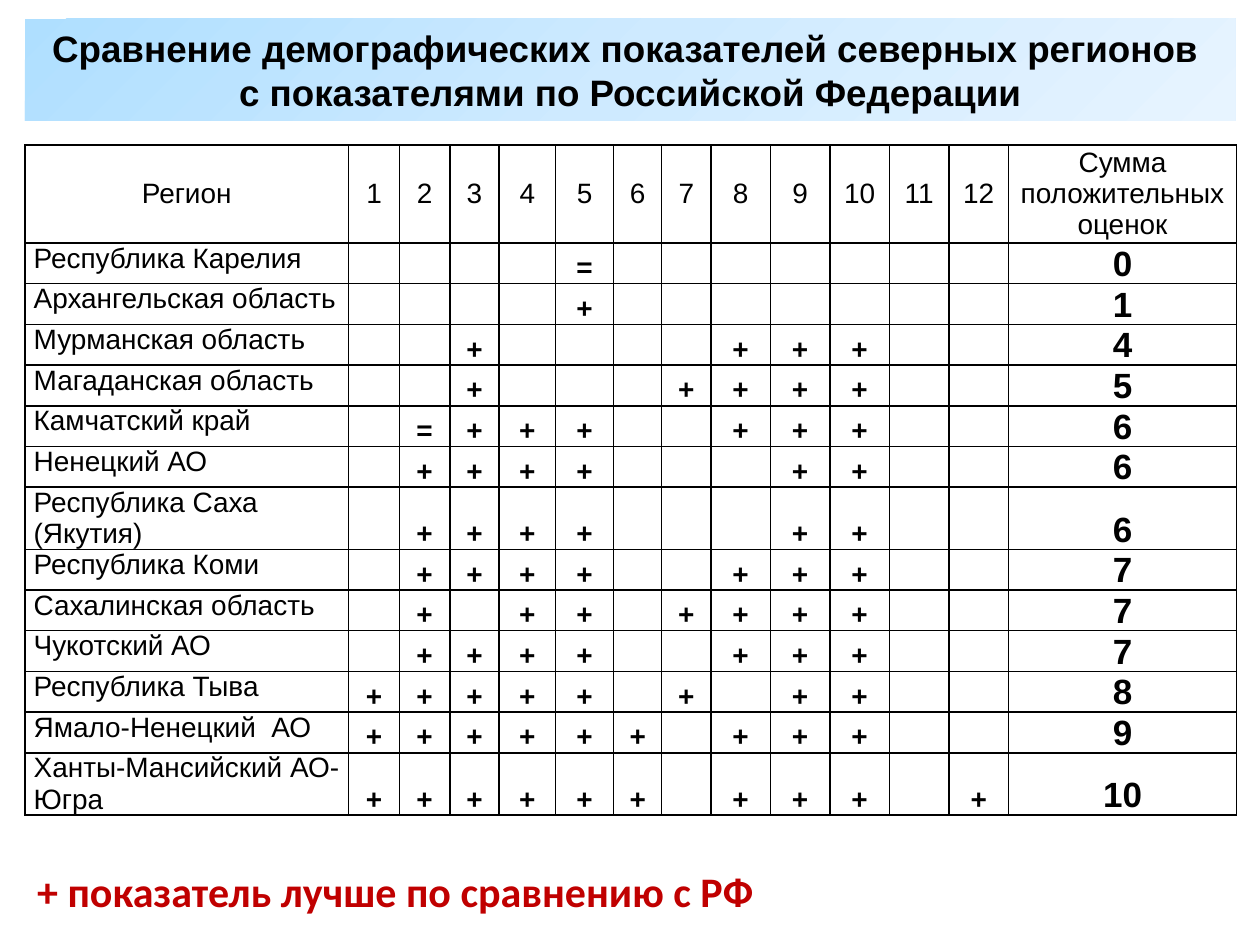
import copy

import lxml.etree
import pptx
import pptx.dml.color
import pptx.enum.shapes
import pptx.enum.text
import pptx.oxml.ns
import pptx.util

Cm = pptx.util.Cm
ALIGN = pptx.enum.text.PP_ALIGN
ANCHOR = pptx.enum.text.MSO_ANCHOR
qn = pptx.oxml.ns.qn

COLOURS = {
    "text": "000000",
    "border": "000000",
    "legend": "C00000",
    "banner_start": "AFDFFF",
    "banner_middle": "CEEAFF",
    "banner_end": "E7F4FF",
}

# Region, marks for indicators 1-12 ("." means no mark), total of positive marks
RATINGS = [
    ("Республика Карелия", "....=.......", 0),
    ("Архангельская область", "....+.......", 1),
    ("Мурманская область", "..+....+++..", 4),
    ("Магаданская область", "..+...++++..", 5),
    ("Камчатский край", ".=+++..+++..", 6),
    ("Ненецкий АО", ".++++...++..", 6),
    ("Республика Саха (Якутия)", ".++++...++..", 6),
    ("Республика Коми", ".++++..+++..", 7),
    ("Сахалинская область", ".+.++.++++..", 7),
    ("Чукотский АО", ".++++..+++..", 7),
    ("Республика Тыва", "+++++.+.++..", 8),
    ("Ямало-Ненецкий  АО", "++++++.+++..", 9),
    ("Ханты-Мансийский АО-Югра", "++++++.+++.+", 10),
]
COLUMN_WIDTHS = [6.53, 1.02, 1.02, 0.99, 1.14, 1.17, 0.97, 0.99] + [1.2] * 5 + [4.6]
HEADER_HEIGHT, ROW_HEIGHT = 1.98, 0.82
LEFT, WIDTH = 0.5, 24.41


def rgb(name):
    return pptx.dml.color.RGBColor.from_string(COLOURS[name])


def write(frame, text, size=16, font="Arial", colour="text", bold=False,
          align=ALIGN.LEFT):
    """Write each line of the text as a paragraph."""
    for index, line in enumerate(text.split("\n")):
        paragraph = frame.paragraphs[0] if index == 0 else frame.add_paragraph()
        paragraph.alignment = align
        run = paragraph.add_run()
        run.text = line
        run.font.size = pptx.util.Pt(size)
        run.font.name = font
        run.font.bold = bold
        run.font.color.rgb = rgb(colour)


class SlideBuilder:
    def __init__(self, slide):
        self.slide = slide
        self.border_width = pptx.util.Pt(1)
        self.cell_inset = Cm(0.18)

    def banner(self, left, top, width, height, text):
        banner = self.slide.shapes.add_shape(
            pptx.enum.shapes.MSO_SHAPE.RECTANGLE,
            Cm(left), Cm(top), Cm(width), Cm(height))
        banner.shadow.inherit = False
        banner.line.fill.background()
        banner.fill.gradient()
        banner.fill.gradient_angle = 315
        # The default gradient has two stops; a third one is added
        first_stop = next(banner.element.spPr.iter(qn("a:gs")))
        first_stop.addnext(copy.deepcopy(first_stop))
        shades = [(0, "banner_start"), (0.5, "banner_middle"), (1, "banner_end")]
        for stop, (position, shade) in zip(banner.fill.gradient_stops, shades):
            stop.position = position
            stop.color.rgb = rgb(shade)
        banner.text_frame.word_wrap = True
        banner.text_frame.vertical_anchor = ANCHOR.MIDDLE
        write(banner.text_frame, text, size=21, bold=True, align=ALIGN.CENTER)

    def cell_borders(self, cell):
        properties = cell._tc.get_or_add_tcPr()
        for index, side in enumerate(("lnL", "lnR", "lnT", "lnB")):
            line = lxml.etree.Element(qn(f"a:{side}"), w=str(self.border_width))
            fill = lxml.etree.SubElement(line, qn("a:solidFill"))
            lxml.etree.SubElement(fill, qn("a:srgbClr"), val=COLOURS["border"])
            properties.insert(index, line)

    def cell(self, cell, text, anchor, **text_format):
        cell.fill.background()
        self.cell_borders(cell)
        cell.margin_left = cell.margin_right = self.cell_inset
        cell.margin_top = cell.margin_bottom = 0
        cell.vertical_anchor = anchor
        if text:
            write(cell.text_frame, text, **text_format)

    def ratings_table(self, left, top, header, ratings):
        height = HEADER_HEIGHT + ROW_HEIGHT * len(ratings)
        table = self.slide.shapes.add_table(
            len(ratings) + 1, len(header),
            Cm(left), Cm(top), Cm(sum(COLUMN_WIDTHS)), Cm(height)).table
        table.first_row = table.horz_banding = False
        for column, width in zip(table.columns, COLUMN_WIDTHS):
            column.width = Cm(width)
        for index, row in enumerate(table.rows):
            row.height = Cm(ROW_HEIGHT if index else HEADER_HEIGHT)

        for column, title in enumerate(header):
            self.cell(table.cell(0, column), title, ANCHOR.MIDDLE,
                      align=ALIGN.CENTER)
        for row, (region, marks, total) in enumerate(ratings, start=1):
            self.cell(table.cell(row, 0), region, ANCHOR.TOP)
            for column, mark in enumerate(marks, start=1):
                self.cell(table.cell(row, column), mark.replace(".", ""),
                          ANCHOR.BOTTOM, bold=True, align=ALIGN.CENTER)
            self.cell(table.cell(row, len(header) - 1), str(total),
                      ANCHOR.BOTTOM, size=20, bold=True, align=ALIGN.CENTER)

    def label(self, left, top, width, height, text, **text_format):
        label = self.slide.shapes.add_textbox(
            Cm(left), Cm(top), Cm(width), Cm(height))
        label.text_frame.word_wrap = True
        write(label.text_frame, text, **text_format)


def main():
    presentation = pptx.Presentation()
    presentation.slide_width, presentation.slide_height = Cm(25.4), Cm(19.05)
    builder = SlideBuilder(
        presentation.slides.add_slide(presentation.slide_layouts[6]))

    # Table of regions
    header = ["Регион", *map(str, range(1, 13)), "Сумма\nположительных оценок"]
    builder.ratings_table(LEFT, 2.92, header, RATINGS)

    # Title
    builder.banner(LEFT, 0.38, WIDTH, 2.06,
                   "Сравнение демографических показателей северных регионов \n"
                   "с показателями по Российской Федерации")

    # Legend
    builder.label(LEFT, 17.32, 15.11, 1.27, "+ показатель лучше по сравнению с РФ",
                  size=24, font="Calibri", colour="legend", bold=True)

    presentation.save("out.pptx")


if __name__ == "__main__":
    main()
